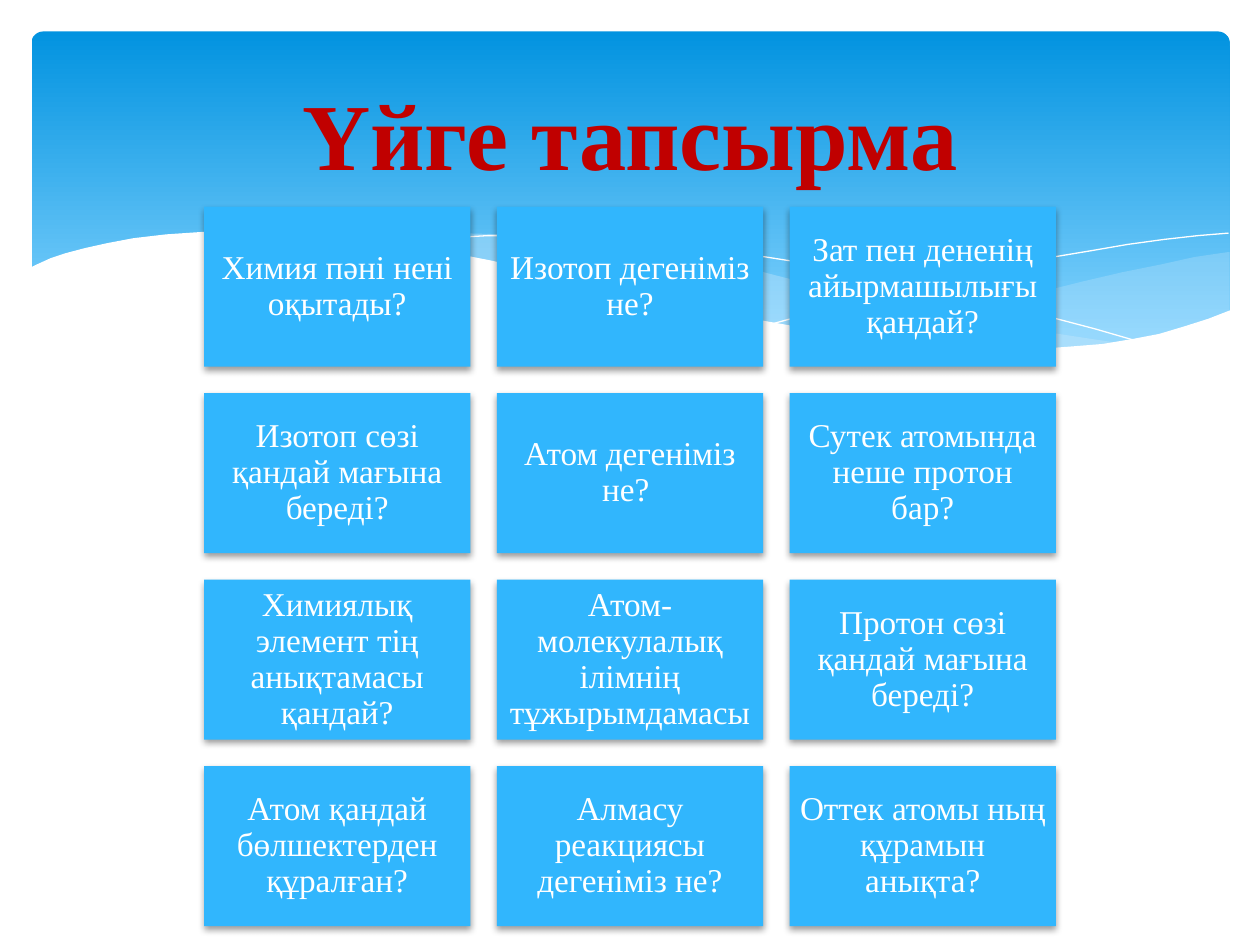
from lxml import etree
from pptx import Presentation
from pptx.dml.color import RGBColor
from pptx.enum.shapes import MSO_SHAPE
from pptx.enum.text import MSO_ANCHOR, PP_ALIGN
from pptx.oxml import parse_xml
from pptx.oxml.ns import nsdecls, qn
from pptx.util import Inches, Pt

RECTANGLE, ROUNDED = MSO_SHAPE.RECTANGLE, MSO_SHAPE.ROUNDED_RECTANGLE
MIDDLE, CENTER = MSO_ANCHOR.MIDDLE, PP_ALIGN.CENTER

# The slide is a grid of 1000 columns by 750 rows of square cells
COLUMNS, ROWS = 1000, 750
CELL = Inches(0.01)
FONT = "Times New Roman"
COLORS = {
    "sky_top": "0293E0",
    "sky_bottom": "83D3FE",
    "mist": "C6E7FC",
    "white": "FFFFFF",
    "title": "C00000",
    "title_edge": "25AFF9",
    "card": "31B6FD",
    "shadow": "000000",
}

TITLE = "Үйге тапсырма"
QUESTIONS = [
    ["Химия пәні нені оқытады?", "Изотоп дегеніміз не?",
     "Зат пен дененің айырмашылығы қандай?"],
    ["Изотоп сөзі қандай мағына береді?", "Атом дегеніміз не? ",
     "Сутек атомында неше протон бар?"],
    ["Химиялық элемент тің анықтамасы қандай?",
     "Атом-молекулалық ілімнің тұжырымдамасы",
     "Протон сөзі қандай мағына береді?"],
    ["Атом қандай бөлшектерден құралған?", "Алмасу реакциясы дегеніміз не?",
     "Оттек атомы ның құрамын анықта?"],
]

# Wave outlines, in grid cells
RIGHT_MIST = [
    (975, 200), (948, 204), (921, 210), (891, 216), (861, 223), (805, 237),
    (753, 248), (706, 257), (661, 265), (691, 269), (719, 272), (745, 275),
    (769, 277), (803, 278), (835, 277), (863, 275), (889, 272), (913, 267),
    (935, 262), (949, 257), (963, 252), (976, 247), (976, 200)]
MIDDLE_MIST = [
    (893, 273), (866, 269), (807, 260), (741, 247), (668, 231), (629, 222),
    (598, 214), (569, 208), (541, 203), (514, 198), (489, 194), (465, 191),
    (442, 189), (420, 187), (399, 186), (361, 185), (328, 187), (299, 189),
    (286, 191), (323, 196), (362, 203), (404, 211), (449, 222), (491, 232),
    (530, 240), (566, 248), (601, 255), (634, 261), (665, 266), (695, 270),
    (722, 274), (748, 276), (773, 277), (796, 278), (828, 278), (857, 277),
    (876, 275)]
FALLING_LINE = [
    (309, 195), (328, 192), (353, 189), (387, 187), (433, 187), (469, 189),
    (510, 192), (556, 197), (608, 204), (665, 213), (695, 219), (727, 226),
    (760, 233), (795, 241), (831, 251), (869, 261), (907, 272)]
RISING_LINE = [
    (613, 257), (653, 246), (695, 235), (748, 223), (806, 210), (836, 204),
    (866, 199), (895, 194), (924, 190), (951, 187), (975, 185)]
WHITE_WAVE = [
    (977, 246), (959, 253), (940, 259), (920, 265), (899, 269), (875, 273),
    (850, 275), (823, 277), (793, 276), (761, 275), (726, 272), (688, 268),
    (648, 262), (603, 254), (555, 245), (503, 233), (447, 220), (391, 207),
    (340, 197), (292, 190), (250, 186), (211, 184), (161, 184), (132, 186),
    (106, 189), (85, 193), (67, 197), (52, 201), (40, 205), (29, 210),
    (23, 213), (23, 329), (977, 329)]


def color(name):
    return RGBColor.from_string(COLORS[name])


def add_block(slide, preset, box):
    block = slide.shapes.add_shape(preset, *(round(side * CELL) for side in box))
    block.shadow.inherit = False
    block.line.fill.background()
    return block


def add_wave(slide, box, points, closed):
    outline = slide.shapes.build_freeform(*points[0], scale=CELL)
    outline.add_line_segments(points[1:], close=closed)
    wave = outline.convert_to_shape(box[0] * CELL, box[1] * CELL)
    wave.shadow.inherit = False
    return wave


def add_backdrop(slide, box):
    left, top, width, _ = box
    # Blue banner
    banner = add_block(slide, ROUNDED, (left + 25, top + 25, width - 49, 270))
    banner.adjustments[0] = 0.034
    banner.fill.gradient()
    banner.fill.gradient_angle = 270
    stops = zip(banner.fill.gradient_stops, (0, 0.9), ("sky_top", "sky_bottom"))
    for stop, position, name in stops:
        stop.position = position
        stop.color.rgb = color(name)

    # Translucent waves, hairlines, then the white wave over them
    for points, opacity in ((RIGHT_MIST, 29), (MIDDLE_MIST, 40)):
        fill_wave(add_wave(slide, box, points, True), "mist", opacity)
    for points in (FALLING_LINE, RISING_LINE):
        hairline = add_wave(slide, box, points, False)
        hairline.fill.background()
        hairline.line.color.rgb = color("white")
        hairline.line.width = Pt(0)
    fill_wave(add_wave(slide, box, WHITE_WAVE, True), "white", 100)


def fill_wave(wave, name, opacity):
    wave.line.fill.background()
    wave.fill.solid()
    wave.fill.fore_color.rgb = color(name)
    if opacity < 100:
        tint = wave.element.spPr.find(qn("a:solidFill"))[0]
        etree.SubElement(tint, qn("a:alpha"), val=str(opacity * 1000))


def write_text(frame, text, size, name):
    frame.word_wrap = True
    frame.vertical_anchor = MIDDLE
    frame.text = text
    paragraph = frame.paragraphs[0]
    paragraph.alignment = CENTER
    run = paragraph.runs[0]
    run.font.name = FONT
    run.font.size = Pt(size)
    run.font.color.rgb = color(name)
    return paragraph


def add_title(slide, box):
    heading = slide.shapes.add_textbox(*(side * CELL for side in box))
    run = write_text(heading.text_frame, TITLE, 54, "title").runs[0]
    run.font.bold = True
    run.font._element.insert(0, parse_xml(
        f'<a:ln {nsdecls("a")} w="{Pt(0.83)}"><a:solidFill>'
        f'<a:srgbClr val="{COLORS["title_edge"]}"/></a:solidFill></a:ln>'))


def add_card(slide, box, question):
    card = add_block(slide, RECTANGLE, box)
    card.fill.solid()
    card.fill.fore_color.rgb = color("card")
    card.element.spPr.find(qn("a:effectLst")).append(parse_xml(
        f'<a:outerShdw {nsdecls("a")} blurRad="{Pt(4)}" dist="{Pt(2)}" '
        f'dir="5400000" rotWithShape="0"><a:srgbClr val="{COLORS["shadow"]}">'
        '<a:alpha val="38000"/></a:srgbClr></a:outerShdw>'))
    frame = card.text_frame
    frame.margin_left = frame.margin_right = 8 * CELL
    frame.margin_top = frame.margin_bottom = 8 * CELL
    write_text(frame, question, 19, "white").line_spacing = 0.9


def add_question_grid(slide, box, gap=21):
    left, top, width, height = box
    card_width = (width + gap) / len(QUESTIONS[0]) - gap
    card_height = (height + gap) / len(QUESTIONS) - gap
    for row, questions in enumerate(QUESTIONS):
        for column, question in enumerate(questions):
            card_left = left + column * (card_width + gap)
            card_top = top + row * (card_height + gap)
            add_card(slide, (card_left, card_top, card_width, card_height), question)


def main():
    deck = Presentation()
    deck.slide_width, deck.slide_height = COLUMNS * CELL, ROWS * CELL
    slide = deck.slides.add_slide(deck.slide_layouts[6])
    add_backdrop(slide, (0, 0, COLUMNS, ROWS))
    add_title(slide, (50, 37, 900, 137))
    add_question_grid(slide, (162, 164, 676, 571))
    deck.save("out.pptx")


if __name__ == "__main__":
    main()
